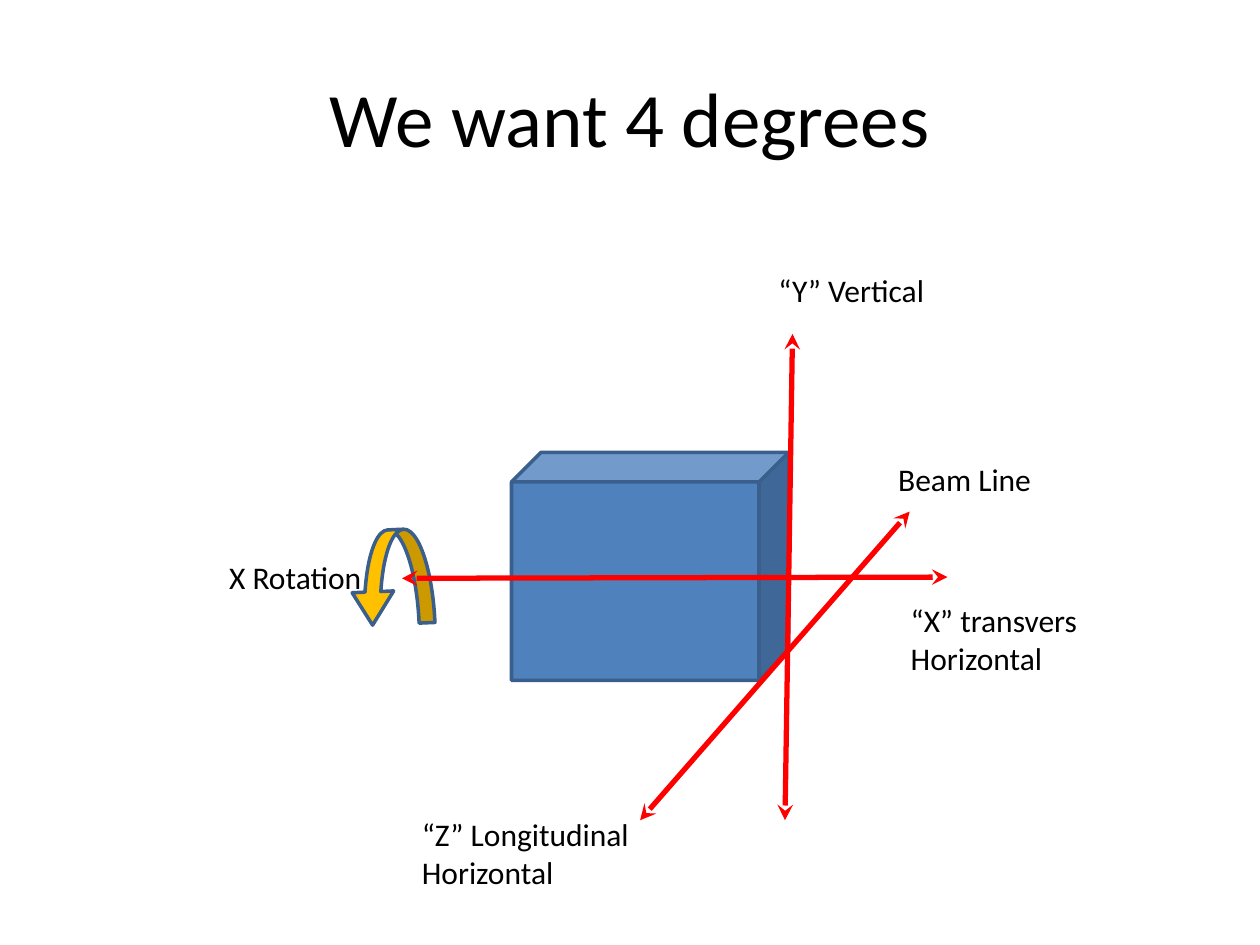
"""Build a slide showing the four degrees of freedom of a block."""
from lxml.etree import SubElement
from pptx import Presentation
from pptx.dml.color import RGBColor
from pptx.enum.shapes import MSO_CONNECTOR, MSO_SHAPE
from pptx.enum.text import MSO_ANCHOR, MSO_AUTO_SIZE, PP_ALIGN
from pptx.oxml.ns import qn
from pptx.util import Inches, Pt

BLACK = RGBColor(0x00, 0x00, 0x00)
RED = RGBColor(0xFF, 0x00, 0x00)
BLUE = RGBColor(0x4F, 0x81, 0xBD)
DARK_BLUE = RGBColor(0x3A, 0x5F, 0x8C)
GOLD = RGBColor(0xFF, 0xC0, 0x00)
FONT = "Calibri"

AXES = [
    ((5.08, 6.51), (7.22, 4.06)),
    ((6.23, 6.51), (6.29, 2.65)),
    ((3.19, 4.59), (7.52, 4.58)),
]
LABELS = [
    ("“X” transvers\nHorizontal", (7.13, 4.72, 1.57, 0.71)),
    ("“Y” Vertical", (6.08, 2.1, 1.44, 0.4)),
    ("X Rotation", (1.72, 4.38, 1.38, 0.4)),
    ("“Z” Longitudinal Horizontal", (3.25, 6.42, 1.9, 0.71)),
    ("Beam Line", (7.03, 3.6, 1.41, 0.4)),
]


def format_text(text_frame, size, alignment):
    """Apply the slide font, size and alignment to all text."""
    for paragraph in text_frame.paragraphs:
        paragraph.alignment = alignment
        for run in paragraph.runs:
            run.font.name = FONT
            run.font.size = Pt(size)
            run.font.color.rgb = BLACK


def set_title(slide, text):
    """Place and format the title placeholder."""
    title = slide.shapes.title
    title.left, title.top = Inches(0.5), Inches(0.3)
    title.width, title.height = Inches(9), Inches(1.25)
    title.text_frame.text = text
    title.text_frame.vertical_anchor = MSO_ANCHOR.MIDDLE
    format_text(title.text_frame, 44, PP_ALIGN.CENTER)


def add_solid(slide, kind, box, fill, adjustments, rotation=0):
    """Add an outlined preset shape."""
    shape = slide.shapes.add_shape(kind, *map(Inches, box))
    for index, value in enumerate(adjustments):
        shape.adjustments[index] = value
    shape.rotation = rotation
    shape.shadow.inherit = False
    shape.fill.solid()
    shape.fill.fore_color.rgb = fill
    shape.line.color.rgb = DARK_BLUE
    shape.line.width = Pt(2)


def add_axis(slide, start, end):
    """Add a red line with a stealth arrowhead at both ends."""
    axis = slide.shapes.add_connector(
        MSO_CONNECTOR.STRAIGHT, *map(Inches, start + end))
    axis.line.color.rgb = RED
    axis.line.width = Pt(3)
    line = axis.line._get_or_add_ln()
    for tag in ("a:headEnd", "a:tailEnd"):
        SubElement(line, qn(tag), type="stealth")
    SubElement(axis._element.spPr, qn("a:effectLst"))


def add_label(slide, text, box):
    """Add a wrapped text label."""
    text_frame = slide.shapes.add_textbox(*map(Inches, box)).text_frame
    text_frame.word_wrap = True
    text_frame.auto_size = MSO_AUTO_SIZE.SHAPE_TO_FIT_TEXT
    text_frame.text = text
    format_text(text_frame, 18, PP_ALIGN.LEFT)


def main():
    """Build and save the presentation."""
    presentation = Presentation()
    presentation.slide_width = Inches(10)
    presentation.slide_height = Inches(7.5)
    slide = presentation.slides.add_slide(presentation.slide_layouts[5])
    set_title(slide, "We want 4 degrees")
    add_solid(slide, MSO_SHAPE.CURVED_RIGHT_ARROW, (2.73, 4.25, 0.75, 0.66),
              GOLD, (0.19, 0.5, 0.4), rotation=87.5)
    add_solid(slide, MSO_SHAPE.CUBE, (4.06, 3.59, 2.2, 1.81), BLUE, (0.13,))
    for start, end in AXES:
        add_axis(slide, start, end)
    for text, box in LABELS:
        add_label(slide, text, box)
    presentation.save("out.pptx")


if __name__ == "__main__":
    main()
